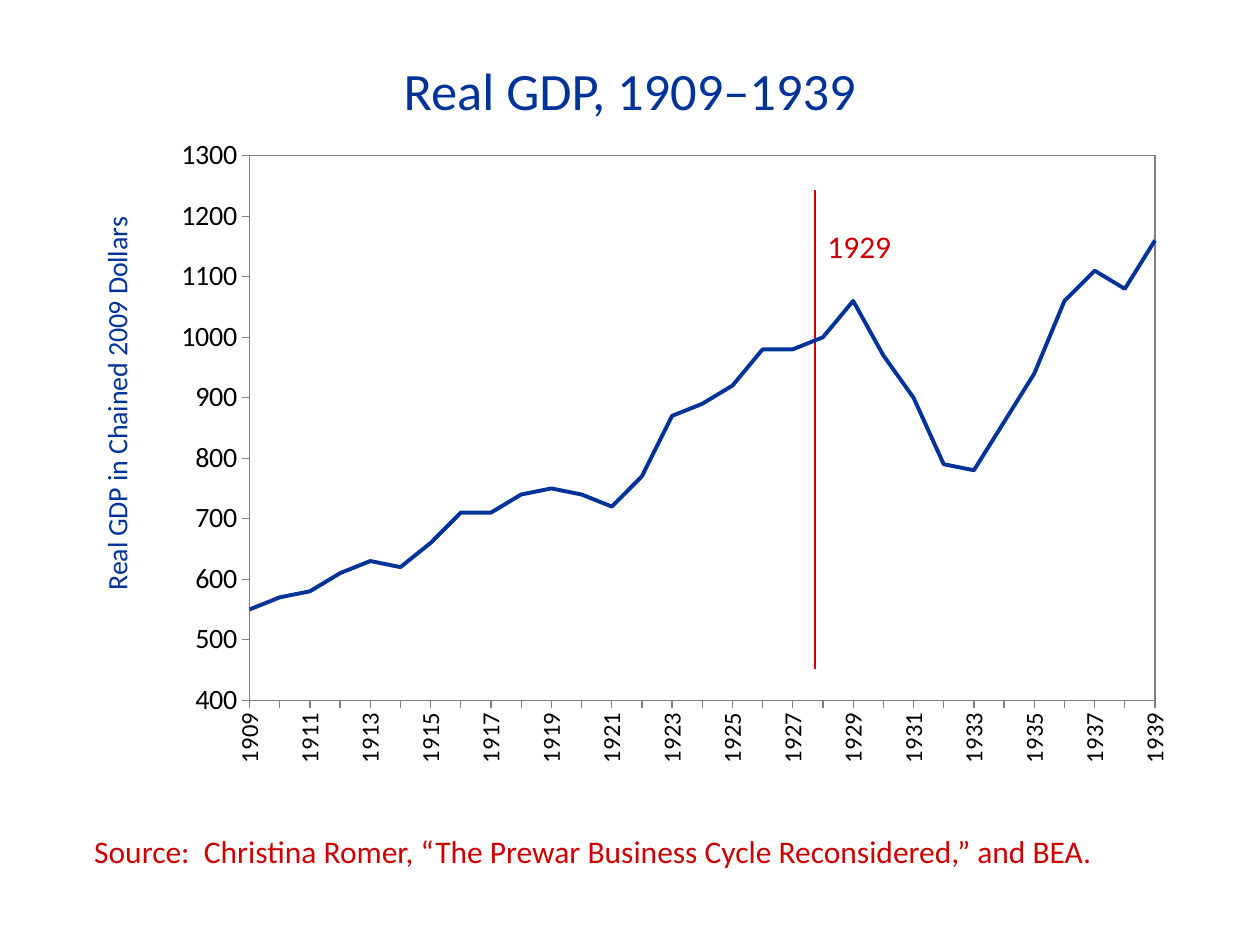
from pptx import Presentation
from pptx.chart.data import CategoryChartData
from pptx.dml.color import RGBColor
from pptx.enum.chart import XL_CHART_TYPE as ChartType, XL_TICK_MARK as TickMark
from pptx.enum.shapes import MSO_CONNECTOR as Connector
from pptx.enum.text import MSO_ANCHOR as Anchor, PP_ALIGN as Align
from pptx.oxml import parse_xml
from pptx.oxml.ns import nsdecls, qn
from pptx.util import Cm, Pt

COLORS = {"blue": "003399", "red": "CC0000", "black": "000000", "gray": "808080"}
FONT = "Calibri"
TITLE = "Real GDP, 1909–1939"
SOURCE = "Source:  Christina Romer, “The Prewar Business Cycle Reconsidered,” and BEA."
AXIS_TITLE = "Real GDP in Chained 2009 Dollars"
MARKED_YEAR = "1929"
FIRST_YEAR = 1909
GDP = [
    550, 570, 580, 610, 630, 620, 660, 710, 710, 740, 750,
    740, 720, 770, 870, 890, 920, 980, 980, 1000, 1060,
    970, 900, 790, 780, 860, 940, 1060, 1110, 1080, 1160,
]
BOXES = {
    "title": (1.78, 1.02, 21.84, 1.55),
    "source": (1.65, 16.64, 22.1, 1.02),
    "chart": (1.65, 2.54, 22.1, 13.34),
    "year": (16.43, 4.45, 1.83, 1.02),
}
MARKER = (16.43, 3.84, 16.43, 13.49)
UPRIGHT = "-5400000"


def color(name):
    return RGBColor.from_string(COLORS[name])


def box(name):
    return [Cm(length) for length in BOXES[name]]


def style_font(font, size, color_name):
    font.name, font.size, font.bold = FONT, Pt(size), False
    font.color.rgb = color(color_name)


def write(shape, text, size, color_name, align=Align.LEFT, anchor=Anchor.MIDDLE):
    frame = shape.text_frame
    frame.word_wrap, frame.vertical_anchor = True, anchor
    paragraph = frame.paragraphs[0]
    paragraph.alignment = align
    run = paragraph.add_run()
    run.text = text
    style_font(run.font, size, color_name)


def manual_layout(target="", **places):
    modes = "".join(f'<c:{axis}Mode val="edge"/>' for axis in "xy")
    values = "".join(f'<c:{key} val="{value}"/>' for key, value in places.items())
    return parse_xml(f'<c:layout {nsdecls("c")}><c:manualLayout>{target}{modes}{values}'
                     '</c:manualLayout></c:layout>')


def shape_properties(line):
    return parse_xml(f'<c:spPr {nsdecls("c", "a")}><a:noFill/>{line}</c:spPr>')


def setting(tag, value):
    return parse_xml(f'<c:{tag} {nsdecls("c")} val="{value}"/>')


def replace_layout(parent, layout, index):
    for old in parent.findall(qn("c:layout")):
        parent.remove(old)
    parent.insert(index, layout)


def style_axis(axis, size):
    axis.has_major_gridlines = False
    axis.major_tick_mark, axis.minor_tick_mark = TickMark.OUTSIDE, TickMark.NONE
    axis.format.line.color.rgb = color("gray")
    style_font(axis.tick_labels.font, size, "black")


def style_plot_area(chart):
    space = chart._chartSpace
    plot_area = space.chart.plotArea
    target = '<c:layoutTarget val="inner"/>'
    replace_layout(plot_area, manual_layout(target, x=0.153, y=0.045, w=0.826, h=0.823), 0)
    border = f'<a:ln w="9525"><a:solidFill><a:srgbClr val="{COLORS["gray"]}"/></a:solidFill></a:ln>'
    plot_area.append(shape_properties(border))
    space.chart.addnext(shape_properties("<a:ln><a:noFill/></a:ln>"))


def style_year_axis(axis):
    style_axis(axis, 14)
    element = axis._element
    element.find(qn("c:txPr")).find(qn("a:bodyPr")).set("rot", UPRIGHT)
    last = element.find(qn("c:noMultiLvlLbl"))
    for tag, step in (("tickLblSkip", 2), ("tickMarkSkip", 1)):
        last.addprevious(setting(tag, step))


def style_gdp_axis(axis):
    style_axis(axis, 16)
    axis.minimum_scale, axis.maximum_scale, axis.major_unit = 400, 1300, 100
    element = axis._element
    for old in element.findall(qn("c:crossBetween")):
        element.remove(old)
    element.find(qn("c:crosses")).addnext(setting("crossBetween", "midCat"))
    frame = axis.axis_title.text_frame
    run = frame.paragraphs[0].add_run()
    run.text = AXIS_TITLE
    style_font(run.font, 16, "blue")
    body = frame._txBody.find(qn("a:bodyPr"))
    body.set("rot", UPRIGHT)
    body.set("vert", "horz")
    replace_layout(axis.axis_title._element, manual_layout(x=0.01, y=0.13), 1)


def add_gdp_chart(slide):
    data = CategoryChartData()
    data.categories = [str(FIRST_YEAR + offset) for offset in range(len(GDP))]
    data.add_series("Real GDP", GDP)
    chart = slide.shapes.add_chart(ChartType.LINE, *box("chart"), data).chart
    chart.has_legend = chart.has_title = False
    style_font(chart.font, 10, "black")
    chart.plots[0].vary_by_categories = False
    series = chart.plots[0].series[0]
    series.smooth = False
    series.format.line.color.rgb = color("blue")
    series.format.line.width = Pt(2.25)
    style_year_axis(chart.category_axis)
    style_gdp_axis(chart.value_axis)
    style_plot_area(chart)


def add_marker(slide):
    marker = slide.shapes.add_connector(Connector.STRAIGHT, *[Cm(value) for value in MARKER])
    marker.line.color.rgb = color("red")
    marker.line.width = Pt(1)
    marker._element.spPr.append(parse_xml(f'<a:effectLst {nsdecls("a")}/>'))


def main():
    """Build the real GDP slide."""
    presentation = Presentation()
    presentation.slide_width, presentation.slide_height = Cm(25.4), Cm(19.05)
    slide = presentation.slides.add_slide(presentation.slide_layouts[5])
    title = slide.shapes.title
    title.left, title.top, title.width, title.height = box("title")
    write(title, TITLE, 30, "blue", Align.CENTER)
    write(slide.shapes.add_textbox(*box("source")), SOURCE, 18, "red")
    add_marker(slide)
    add_gdp_chart(slide)
    year = slide.shapes.add_textbox(*box("year"))
    write(year, MARKED_YEAR, 18, "red", anchor=Anchor.TOP)
    presentation.save("out.pptx")


if __name__ == "__main__":
    main()
